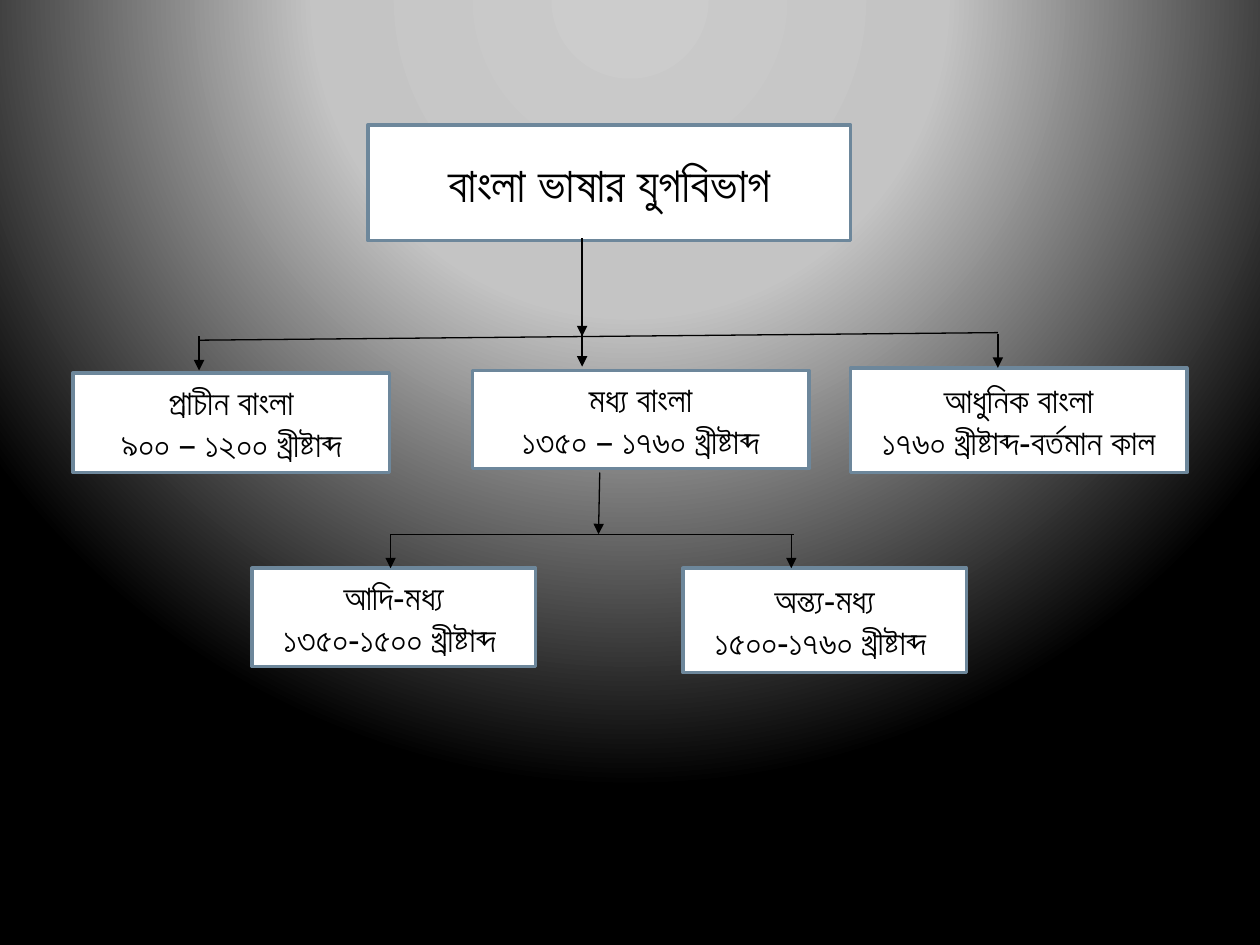
from lxml import etree
from pptx import Presentation
from pptx.dml.color import RGBColor
from pptx.enum.shapes import MSO_CONNECTOR, MSO_SHAPE
from pptx.enum.text import MSO_ANCHOR, MSO_AUTO_SIZE, PP_ALIGN
from pptx.oxml import parse_xml
from pptx.oxml.ns import nsdecls, qn
from pptx.util import Inches, Pt

BLACK = RGBColor(0x00, 0x00, 0x00)
WHITE = RGBColor(0xFF, 0xFF, 0xFF)
STEEL = RGBColor(0x6D, 0x87, 0x9B)
LIGHT_GREY = RGBColor(0xCC, 0xCC, 0xCC)
MID_GREY = RGBColor(0xC4, 0xC4, 0xC4)


class TreeSlide:
    font = "Arial"

    def __init__(self, prs):
        self.slide = prs.slides.add_slide(prs.slide_layouts[5])

    def spotlight(self, stops):
        """Fill the background with a circular gradient centred above the slide."""
        fill = self.slide.background.fill
        fill.solid()
        gs = "".join(
            f'<a:gs pos="{pos * 1000}"><a:srgbClr val="{color}"/></a:gs>'
            for pos, color in stops
        )
        grad = parse_xml(
            f'<a:gradFill {nsdecls("a")} rotWithShape="1"><a:gsLst>{gs}</a:gsLst>'
            '<a:path path="circle"><a:fillToRect l="50000" t="-80000" '
            'r="50000" b="180000"/></a:path></a:gradFill>'
        )
        solid = self.slide.element.find(".//" + qn("p:bgPr")).find(qn("a:solidFill"))
        solid.getparent().replace(solid, grad)

    def style_box(self, sp, text, size):
        sp.fill.solid()
        sp.fill.fore_color.rgb = WHITE
        sp.line.color.rgb = STEEL
        sp.line.width = Pt(2)
        tf = sp.text_frame
        tf.text = text
        tf.word_wrap = True
        tf.auto_size = MSO_AUTO_SIZE.NONE
        tf.vertical_anchor = MSO_ANCHOR.MIDDLE
        for p in tf.paragraphs:
            p.alignment = PP_ALIGN.CENTER
            for r in p.runs:
                r.font.name = self.font
                r.font.size = Pt(size)
                r.font.color.rgb = BLACK

    def title(self, text, x, y, w, h):
        sp = self.slide.shapes.title
        sp.left, sp.top, sp.width, sp.height = map(Inches, (x, y, w, h))
        self.style_box(sp, text, 28)

    def period(self, name, years, x, y, w, h):
        sp = self.slide.shapes.add_shape(
            MSO_SHAPE.RECTANGLE, *map(Inches, (x, y, w, h))
        )
        sp.shadow.inherit = False
        self.style_box(sp, f"{name}\n{years}", 20)

    def line(self, x1, y1, x2, y2, arrow=False):
        c = self.slide.shapes.add_connector(
            MSO_CONNECTOR.STRAIGHT, *map(Inches, (x1, y1, x2, y2))
        )
        c.line.color.rgb = BLACK
        c.line.width = Pt(0.75)
        if arrow:
            etree.SubElement(c.line._get_or_add_ln(), qn("a:tailEnd"), type="triangle")
        etree.SubElement(c._element.spPr, qn("a:effectLst"))

    def drop(self, x, y, length=0.27):
        self.line(x, y, x, y + length, arrow=True)


def main():
    prs = Presentation()
    prs.slide_width, prs.slide_height = Inches(10), Inches(7.5)
    s = TreeSlide(prs)
    s.spotlight([(0, LIGHT_GREY), (40, MID_GREY), (100, BLACK)])
    s.title("বাংলা ভাষার যুগবিভাগ", 2.92, 0.99, 3.83, 0.92)

    periods = [
        ("প্রাচীন বাংলা", "৯০০ – ১২০০ খ্রীষ্টাব্দ", 0.58, 2.96, 2.51, 0.79),
        ("মধ্য বাংলা", "১৩৫০ – ১৭৬০ খ্রীষ্টাব্দ", 3.75, 2.94, 2.67, 0.78),
        ("আধুনিক বাংলা", "১৭৬০ খ্রীষ্টাব্দ-বর্তমান কাল", 6.75, 2.92, 2.67, 0.83),
        ("আদি-মধ্য", "১৩৫০-১৫০০ খ্রীষ্টাব্দ ", 2, 4.51, 2.25, 0.78),
        ("অন্ত্য-মধ্য", "১৫০০-১৭৬০ খ্রীষ্টাব্দ ", 5.42, 4.51, 2.25, 0.83),
    ]
    for period in periods:
        s.period(*period)

    # Title to the three main periods
    s.drop(4.62, 1.89, 0.78)
    s.line(1.58, 2.7, 7.92, 2.64)
    for x, y in [(1.58, 2.67), (4.62, 2.64), (7.92, 2.65)]:
        s.drop(x, y)

    # Middle period to its two halves
    s.line(4.76, 3.75, 4.75, 4.24, arrow=True)
    s.line(3.1, 4.24, 6.3, 4.24)
    for x in (3.1, 6.28):
        s.drop(x, 4.24)

    prs.save("out.pptx")


if __name__ == "__main__":
    main()
